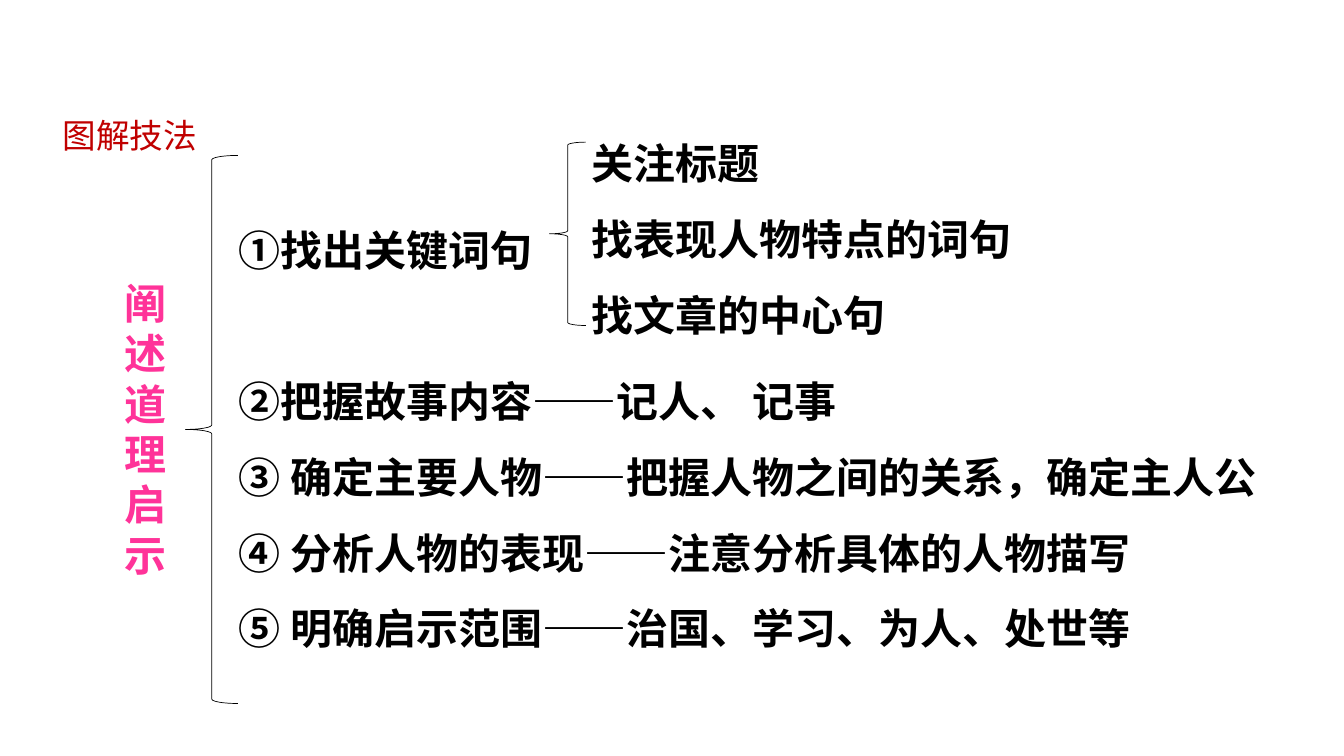
"""Build the slide that maps the steps for explaining a story's message."""
from dataclasses import dataclass

from lxml.etree import SubElement
from pptx import Presentation
from pptx.dml.color import RGBColor as RGB
from pptx.enum.shapes import MSO_SHAPE as Shape
from pptx.enum.text import MSO_AUTO_SIZE as Fit
from pptx.oxml.ns import qn
from pptx.util import Pt


@dataclass(frozen=True)
class Theme:
    """Colours, fonts and sizes of the slide."""
    ink: RGB = RGB(0, 0, 0)
    red: RGB = RGB(0xC0, 0, 0)
    pink: RGB = RGB(0xFF, 0x33, 0x99)
    latin: str = "Arial"
    han: str = "Noto Sans CJK SC"
    head: int = 24
    body: int = 30
    rule: float = 0.5
    gap: int = 54


THEME = Theme()
STEPS = [
    "①找出关键词句",
    "②把握故事内容——记人、 记事",
    "③ 确定主要人物——把握人物之间的关系，确定主人公",
    "④ 分析人物的表现——注意分析具体的人物描写",
    "⑤ 明确启示范围——治国、学习、为人、处世等",
]
CLUES = ["关注标题", "找表现人物特点的词句", "找文章的中心句"]


def add_text(slide, box, lines, color=THEME.ink, size=THEME.body,
             font=THEME.latin, bold=True, space=None):
    """Add a text box with one paragraph per line and return its frame."""
    frame = slide.shapes.add_textbox(*map(Pt, box)).text_frame
    frame.word_wrap = True
    frame.auto_size = Fit.SHAPE_TO_FIT_TEXT
    frame.text = "\n".join(lines)
    for para in frame.paragraphs:
        para.line_spacing = space
        for run in para.runs:
            run.font.name = font
            run.font.size = Pt(size)
            run.font.bold = bold
            run.font.color.rgb = color
            SubElement(run.font._element, qn("a:ea"), typeface=THEME.han)
    return frame


def add_brace(slide, box):
    """Add a thin left brace."""
    brace = slide.shapes.add_shape(Shape.LEFT_BRACE, *map(Pt, box))
    brace.shadow.inherit = False
    brace.fill.background()
    brace.line.color.rgb = THEME.ink
    brace.line.width = Pt(THEME.rule)


def main():
    """Build and save the slide."""
    deck = Presentation()
    deck.slide_width, deck.slide_height = Pt(960), Pt(540)
    slide = deck.slides.add_slide(deck.slide_layouts[6])

    add_text(slide, (37.5, 78.5, 145.5, 36), ["图解技法"],
             THEME.red, THEME.head, THEME.han, bold=False)
    add_text(slide, (82, 194.5, 47.5, 225.5), "阐述道理启示", THEME.pink)
    add_brace(slide, (132.5, 111, 37.5, 391.5))

    steps = add_text(slide, (163.5, 139, 764.5, 334), STEPS, space=1.5)
    steps.paragraphs[1].space_before = Pt(THEME.gap)

    add_brace(slide, (392.5, 101.5, 26, 131))
    add_text(slide, (415.5, 77, 355.5, 170.5), CLUES, space=1.5)
    deck.save("out.pptx")


if __name__ == "__main__":
    main()
